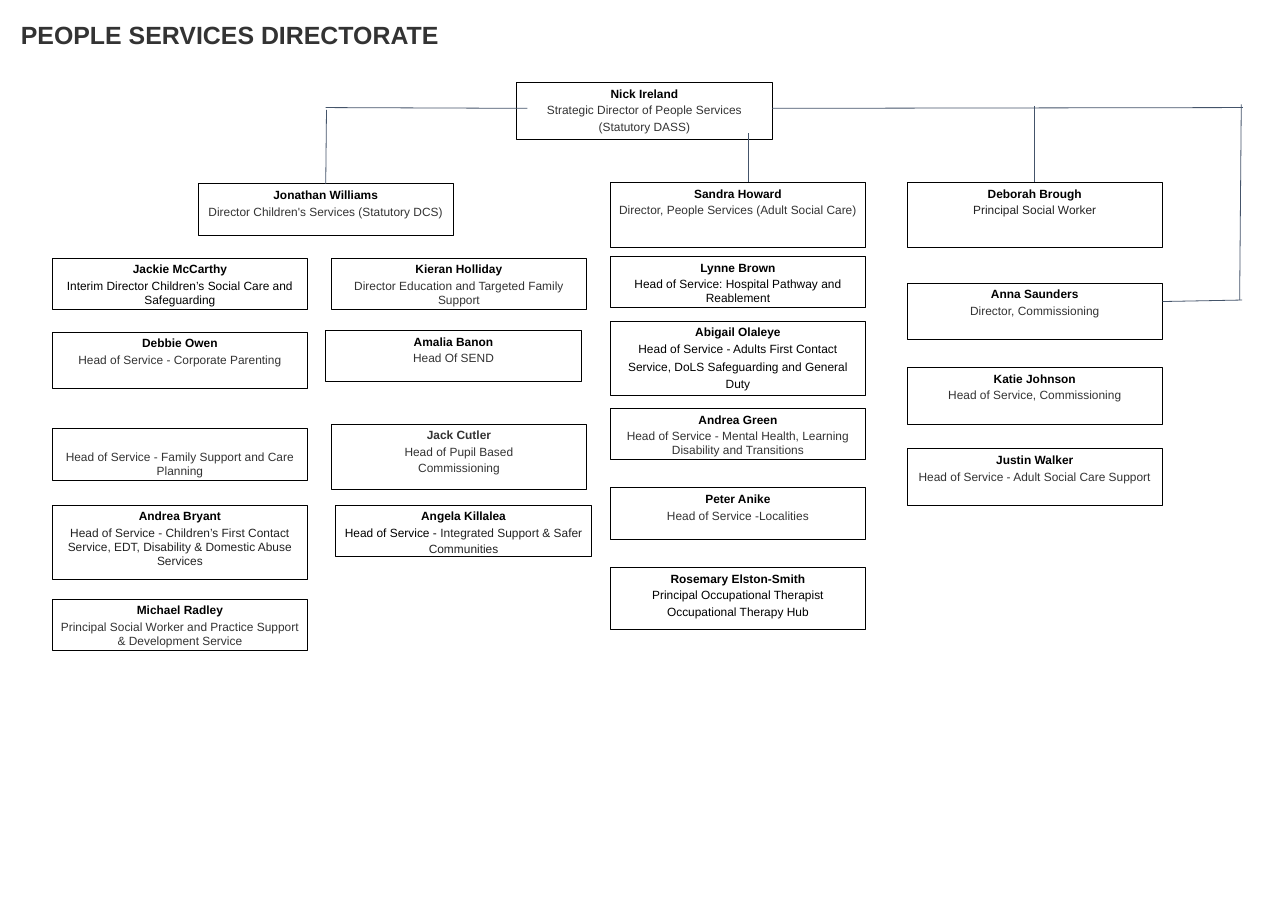
from dataclasses import dataclass

from pptx import Presentation
from pptx.dml.color import RGBColor
from pptx.enum.shapes import MSO_CONNECTOR as Connector, MSO_SHAPE as Shape
from pptx.enum.text import MSO_ANCHOR as Anchor, PP_ALIGN as Align
from pptx.oxml.ns import qn
from pptx.util import Pt

BLACK, CHARCOAL, DARK, SLATE = "000000", "333333", "222222", "44546A"
FONT = "Arial"
BOX_WIDTH = 236.2
SHORT, MEDIUM, TALL, TALLEST = 47.5, 52.6, 60.5, 68.4
CHILDREN, EDUCATION, ADULTS, COMMISSIONING = 48.2, 306, 563.8, 838.1


@dataclass
class Post:
    left: float
    top: float
    height: float
    name: str
    role: tuple
    colour: str = CHARCOAL
    name_colour: str = BLACK
    lead: str = ""
    leading: float = 0


title = "PEOPLE SERVICES DIRECTORATE"

posts = [
    Post(477.4, 76.3, MEDIUM, "Nick Ireland",
         ("Strategic Director of People Services", "(Statutory DASS)")),
    Post(182.9, 169.9, SHORT, "Jonathan Williams",
         ("Director Children's Services (Statutory DCS)",)),

    Post(CHILDREN, 238.3, SHORT, "Jackie McCarthy",
         ("Interim Director Children’s Social Care and Safeguarding",), BLACK),
    Post(CHILDREN, 306.7, MEDIUM, "Debbie Owen",
         ("Head of Service - Corporate Parenting",)),
    Post(CHILDREN, 396, SHORT, "",
         ("Head of Service - Family Support and Care Planning",)),
    Post(CHILDREN, 466.6, TALLEST, "Andrea Bryant",
         ("Head of Service - Children’s First Contact Service, EDT, "
          "Disability & Domestic Abuse Services",), DARK),
    Post(CHILDREN, 553.7, SHORT, "Michael Radley",
         ("Principal Social Worker and Practice Support & Development Service",)),

    Post(EDUCATION, 238.3, SHORT, "Kieran Holliday",
         ("Director Education and Targeted Family Support",)),
    Post(301, 305.3, SHORT, "Amalia Banon", ("Head Of SEND",)),
    Post(EDUCATION, 391.7, TALL, "Jack Cutler",
         ("Head of Pupil Based", "Commissioning"), name_colour=CHARCOAL),
    Post(310.3, 466.6, SHORT, "Angela Killalea",
         ("Integrated Support & Safer Communities",), DARK,
         lead="Head of Service - ", leading=1.15),

    Post(ADULTS, 168.5, TALL, "Sandra Howard",
         ("Director, People Services (Adult Social Care)",)),
    Post(ADULTS, 236.9, SHORT, "Lynne Brown",
         ("Head of Service: Hospital Pathway and Reablement",), BLACK),
    Post(ADULTS, 296.6, TALLEST, "Abigail Olaleye",
         ("Head of Service - Adults First Contact Service, "
          "DoLS Safeguarding and General Duty",), BLACK, leading=1.2),
    Post(ADULTS, 377.3, SHORT, "Andrea Green",
         ("Head of Service - Mental Health, Learning Disability and Transitions",)),
    Post(ADULTS, 450.7, SHORT, "Peter Anike", ("Head of Service -Localities",)),
    Post(ADULTS, 524.2, 56.9, "Rosemary Elston-Smith",
         ("Principal Occupational Therapist", "Occupational Therapy Hub"), BLACK),

    Post(COMMISSIONING, 168.5, TALL, "Deborah Brough",
         ("Principal Social Worker",), DARK),
    Post(COMMISSIONING, 261.4, MEDIUM, "Anna Saunders", ("Director, Commissioning",)),
    Post(COMMISSIONING, 339.8, MEDIUM, "Katie Johnson",
         ("Head of Service, Commissioning",)),
    Post(COMMISSIONING, 414.7, MEDIUM, "Justin Walker",
         ("Head of Service - Adult Social Care Support",)),
]

reporting_lines = [
    (1074.2, 278.6, 1147.7, 277.2),
    (1147, 96.5, 1145.5, 277.2),
    (1148.4, 99.4, 713.5, 100.1),
    (301, 99.4, 487.4, 100.1),
    (301.7, 101.5, 301, 169.9),
    (691.2, 123.1, 691.2, 168.5),
    (956.2, 97.9, 956.2, 168.5),
]


def rgb(hex_colour):
    return RGBColor.from_string(hex_colour)


def style(run, size, colour, bold=False):
    run.font.name = FONT
    run.font.size = Pt(size)
    run.font.bold = bold
    run.font.color.rgb = rgb(colour)


def add_post(slide, post):
    box = slide.shapes.add_shape(Shape.RECTANGLE, Pt(post.left), Pt(post.top),
                                 Pt(BOX_WIDTH), Pt(post.height))
    box.shadow.inherit = False
    box.fill.background()
    box.line.color.rgb = rgb(BLACK)
    box.line.width = Pt(0.75)
    frame = box.text_frame
    frame.word_wrap = True
    frame.vertical_anchor = Anchor.TOP
    frame.margin_left = frame.margin_right = Pt(7.2)
    frame.margin_top = Pt(3.6 if post.name else 19)
    frame.margin_bottom = Pt(3.6)

    entries = [(post.name, post.name_colour, True)] if post.name else []
    entries += [(line, post.colour, False) for line in post.role]
    for index, (text, colour, bold) in enumerate(entries):
        paragraph = frame.add_paragraph() if index else frame.paragraphs[0]
        paragraph.alignment = Align.CENTER
        if not bold and post.lead:
            paragraph.text = post.lead
            style(paragraph.runs[0], 11, BLACK)
            paragraph.add_run().text = text
        else:
            paragraph.text = text
        style(paragraph.runs[-1], 11, colour, bold)
        if not bold and post.leading:
            paragraph.line_spacing = post.leading
        elif index:
            paragraph.space_before = Pt(2)


def add_reporting_line(slide, ends):
    line = slide.shapes.add_connector(Connector.STRAIGHT, *map(Pt, ends))
    line.line.color.rgb = rgb(SLATE)
    line.line.width = Pt(0.75)
    properties = line._element.spPr
    properties.append(properties.makeelement(qn("a:effectLst"), {}))


def add_title(slide):
    heading = slide.shapes.add_textbox(Pt(12.2), Pt(13.7), Pt(628.6), Pt(68.4))
    frame = heading.text_frame
    frame.word_wrap = True
    frame.margin_left = frame.margin_right = Pt(7.2)
    frame.margin_top = frame.margin_bottom = Pt(7.2)
    frame.text = title
    frame.paragraphs[0].line_spacing = 0.9
    style(frame.paragraphs[0].runs[0], 23, CHARCOAL, True)


def main():
    deck = Presentation()
    deck.slide_width, deck.slide_height = Pt(1190.16), Pt(841.68)
    slide = deck.slides.add_slide(deck.slide_layouts[6])
    add_title(slide)
    for post in posts:
        add_post(slide, post)
    for ends in reporting_lines:
        add_reporting_line(slide, ends)
    deck.save("out.pptx")


if __name__ == "__main__":
    main()
